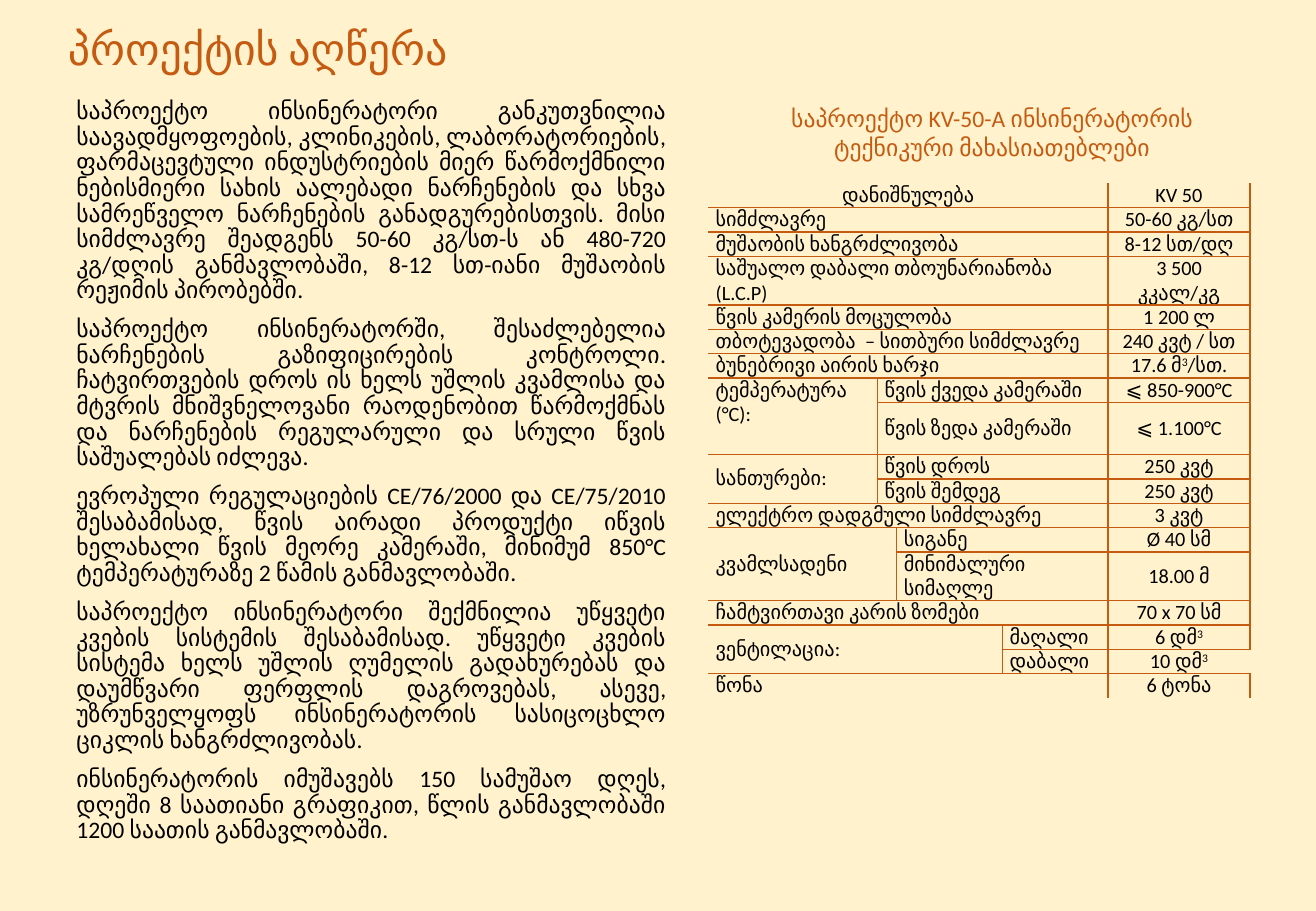
from pptx import Presentation
from pptx.dml.color import RGBColor
from pptx.enum.text import MSO_ANCHOR, PP_ALIGN
from pptx.oxml import parse_xml
from pptx.oxml.ns import nsdecls
from pptx.util import Pt

PX = 9144
THEME = {
    "font": "Calibri",
    "paper": "FFF2CC",
    "accent": "C55A11",
    "ink": "000000",
    "title": 26,
    "body": 14,
    "table": 12,
}
NO_STYLE = "{2D5ABB26-0587-4C30-8999-92F81FD0307C}"


def write(p, text, size, color, align=PP_ALIGN.LEFT):
    p.alignment = align
    for i, part in enumerate(text.split("^")):
        r = p.add_run()
        r.text = part
        r.font.name = THEME["font"]
        r.font.size = Pt(THEME[size])
        r.font.color.rgb = RGBColor.from_string(THEME[color])
        if i % 2:
            r._r.get_or_add_rPr().set("baseline", "30000")


def textbox(x, y, w, h):
    tf = s.shapes.add_textbox(x * PX, y * PX, w * PX, h * PX).text_frame
    tf.word_wrap = True
    return tf


prs = Presentation()
prs.slide_width = 1083 * PX
prs.slide_height = 750 * PX
s = prs.slides.add_slide(prs.slide_layouts[6])
s.background.fill.solid()
s.background.fill.fore_color.rgb = RGBColor.from_string(THEME["paper"])

tf = textbox(46, -2, 731, 69)
tf.vertical_anchor = MSO_ANCHOR.BOTTOM
tf.paragraphs[0].line_spacing = 0.9
write(tf.paragraphs[0], "პროექტის აღწერა", "title", "accent")

description = [
    "საპროექტო ინსინერატორი განკუთვნილია საავადმყოფოების, კლინიკების, ლაბორატორიების, ფარმაცევტული ინდუსტრიების მიერ წარმოქმნილი ნებისმიერი სახის აალებადი ნარჩენების და სხვა სამრეწველო ნარჩენების განადგურებისთვის. მისი სიმძლავრე შეადგენს 50-60 კგ/სთ-ს ან 480-720 კგ/დღის განმავლობაში, 8-12 სთ-იანი მუშაობის რეჟიმის პირობებში.",
    "საპროექტო ინსინერატორში, შესაძლებელია ნარჩენების გაზიფიცირების კონტროლი. ჩატვირთვების დროს ის ხელს უშლის კვამლისა და მტვრის მნიშვნელოვანი რაოდენობით წარმოქმნას და ნარჩენების რეგულარული და სრული წვის საშუალებას იძლევა.",
    "ევროპული რეგულაციების CE/76/2000 და CE/75/2010 შესაბამისად, წვის აირადი პროდუქტი იწვის ხელახალი წვის მეორე კამერაში, მინიმუმ 850°C ტემპერატურაზე 2 წამის განმავლობაში.",
    "საპროექტო ინსინერატორი შექმნილია უწყვეტი კვების სისტემის შესაბამისად. უწყვეტი კვების სისტემა ხელს უშლის ღუმელის გადახურებას და დაუმწვარი ფერფლის დაგროვებას, ასევე, უზრუნველყოფს ინსინერატორის სასიცოცხლო ციკლის ხანგრძლივობას.",
    "ინსინერატორის იმუშავებს 150 სამუშაო დღეს, დღეში 8 საათიანი გრაფიკით, წლის განმავლობაში 1200 საათის განმავლობაში.",
]
tf = textbox(53, 77, 505, 626)
for i, text in enumerate(description):
    p = tf.add_paragraph() if i else tf.paragraphs[0]
    p.line_spacing = 0.9
    p.space_before = Pt(8.1)
    write(p, text, "body", "ink", PP_ALIGN.JUSTIFY)

tf = textbox(603, 81, 427, 57)
write(tf.paragraphs[0], "საპროექტო KV-50-A ინსინერატორის ტექნიკური მახასიათებლები",
      "body", "accent", PP_ALIGN.CENTER)

specs = [
    ("დანიშნულება", 4, "", "KV 50"),
    ("სიმძლავრე", 4, "", "50-60 კგ/სთ"),
    ("მუშაობის ხანგრძლივობა", 4, "", "8-12 სთ/დღ"),
    ("საშუალო დაბალი თბოუნარიანობა (L.C.P)", 4, "", "3 500 კკალ/კგ"),
    ("წვის კამერის მოცულობა", 4, "", "1 200 ლ"),
    ("თბოტევადობა  – სითბური სიმძლავრე", 4, "", "240 კვტ / სთ"),
    ("ბუნებრივი აირის ხარჯი", 4, "", "17.6 მ^3^/სთ."),
    ("ტემპერატურა (°C):", 1, "წვის ქვედა კამერაში", "⩽ 850-900°C"),
    ("", 1, "წვის ზედა კამერაში", "⩽ 1.100°C"),
    ("სანთურები:", 1, "წვის დროს", "250 კვტ"),
    ("", 1, "წვის შემდეგ", "250 კვტ"),
    ("ელექტრო დადგმული სიმძლავრე", 4, "", "3 კვტ"),
    ("კვამლსადენი", 2, "სიგანე", "Ø 40 სმ"),
    ("", 2, "მინიმალური სიმაღლე", "18.00 მ"),
    ("ჩამტვირთავი კარის ზომები", 4, "", "70 x 70 სმ"),
    ("ვენტილაცია:", 3, "მაღალი", "6 დმ^3"),
    ("", 3, "დაბალი", "10 დმ^3"),
    ("წონა", 4, "", "6 ტონა"),
]
widths = [139, 10, 87, 87, 117]
tall_rows = {3: 40, 8: 43, 13: 40}
heights = [tall_rows.get(i, 20) for i in range(len(specs))]
tbl = s.shapes.add_table(len(specs), len(widths), 583 * PX, 151 * PX,
                         sum(widths) * PX, sum(heights) * PX).table
tbl.first_row = tbl.horz_banding = False
tbl._tbl.tblPr[0].text = NO_STYLE
for col, w in zip(tbl.columns, widths):
    col.width = w * PX
for row, h in zip(tbl.rows, heights):
    row.height = h * PX

for i, (label, split, sublabel, value) in enumerate(specs):
    entries = [(4, 5, 1, value)]
    if label:
        entries.append((0, split, 2 if sublabel else 1, label))
    if sublabel:
        entries.append((split, 4, 1, sublabel))
    for left, right, span, text in entries:
        cell = tbl.cell(i, left)
        if right - left > 1 or span > 1:
            cell.merge(tbl.cell(i + span - 1, right - 1))
        cell.vertical_anchor = MSO_ANCHOR.TOP if text.startswith("ტემპერატურა") else MSO_ANCHOR.MIDDLE
        cell.margin_left = cell.margin_right = 6 * PX
        cell.margin_top = cell.margin_bottom = 0
        centred = left == 4 or i == 0
        write(cell.text_frame.paragraphs[0], text, "table", "ink",
              PP_ALIGN.CENTER if centred else PP_ALIGN.LEFT)
        inner = {"lnL": left > 0, "lnR": right < 5, "lnT": i > 0, "lnB": i + span < len(specs)}
        for edge, shown in inner.items():
            if shown:
                cell._tc.get_or_add_tcPr().append(parse_xml(
                    f'<a:{edge} {nsdecls("a")} w="12700"><a:solidFill>'
                    f'<a:srgbClr val="{THEME["accent"]}"/></a:solidFill></a:{edge}>'))
        cell.fill.background()

prs.save("out.pptx")
